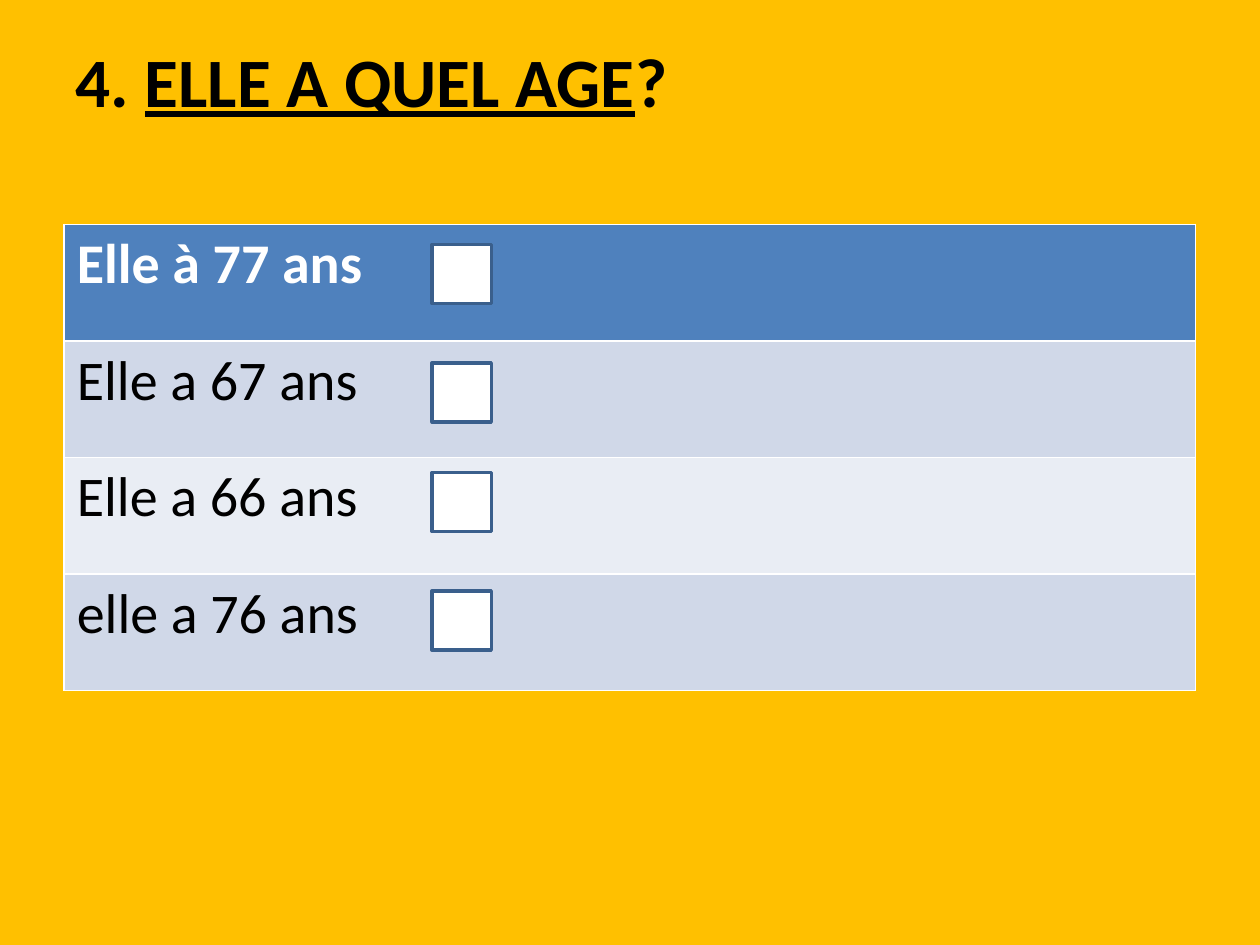
from dataclasses import dataclass

import pptx
import pptx.dml.color
import pptx.enum.shapes
import pptx.enum.text
import pptx.util

Inches = pptx.util.Inches


@dataclass(frozen=True)
class Theme:
    font: str = "Calibri"
    title_size: float = 39.6
    answer_size: float = 32
    background: str = "FFC000"
    dark: str = "000000"
    light: str = "FFFFFF"
    header: str = "4F81BD"
    band_odd: str = "D0D8E8"
    band_even: str = "E9EDF4"
    outline: str = "3A5F8C"


THEME = Theme()
ANSWERS = ["Elle à 77 ans", "Elle a 67 ans", "Elle a 66 ans", "elle a 76 ans"]
CHECKBOX_TOPS = [1.94, 2.88, 3.75, 4.69]


def paint(fill, color):
    fill.solid()
    fill.fore_color.rgb = pptx.dml.color.RGBColor.from_string(color)


def add_span(para, text, size, color=THEME.dark, bold=False, underline=False):
    span = para.add_run()
    span.text = text
    font = span.font
    font.name = THEME.font
    font.size = pptx.util.Pt(size)
    font.bold = bold
    font.underline = underline
    font.color.rgb = pptx.dml.color.RGBColor.from_string(color)


def add_title(page):
    title = page.shapes.title
    title.left, title.top = Inches(0.5), Inches(0.3)
    title.width, title.height = Inches(9), Inches(1.25)
    frame = title.text_frame
    frame.vertical_anchor = pptx.enum.text.MSO_ANCHOR.TOP
    frame.margin_top = 0
    para = frame.paragraphs[0]
    para.alignment = pptx.enum.text.PP_ALIGN.LEFT
    for text, underline in [("4. ", False), ("ELLE A QUEL AGE", True), ("?", False)]:
        add_span(para, text, THEME.title_size, bold=True, underline=underline)


def add_answers(page):
    table = page.shapes.add_table(
        len(ANSWERS), 1, Inches(0.51), Inches(1.78), Inches(8.98), Inches(3.7)
    ).table
    for index, answer in enumerate(ANSWERS):
        cell = table.cell(index, 0)
        is_header = index == 0
        band = THEME.band_odd if index % 2 else THEME.band_even
        paint(cell.fill, THEME.header if is_header else band)
        add_span(
            cell.text_frame.paragraphs[0],
            answer,
            THEME.answer_size,
            color=THEME.light if is_header else THEME.dark,
            bold=is_header,
        )


def add_checkbox(page, top):
    side = Inches(0.47)
    box = page.shapes.add_shape(
        pptx.enum.shapes.MSO_SHAPE.RECTANGLE, Inches(3.43), Inches(top), side, side
    )
    box.shadow.inherit = False
    paint(box.fill, THEME.light)
    paint(box.line.fill, THEME.outline)
    box.line.width = pptx.util.Pt(2)


def main():
    deck = pptx.Presentation()
    deck.slide_width, deck.slide_height = Inches(10), Inches(7.5)
    page = deck.slides.add_slide(deck.slide_layouts.get_by_name("Title Only"))
    paint(page.background.fill, THEME.background)
    add_title(page)
    add_answers(page)
    for top in CHECKBOX_TOPS:
        add_checkbox(page, top)
    deck.save("out.pptx")


if __name__ == "__main__":
    main()
